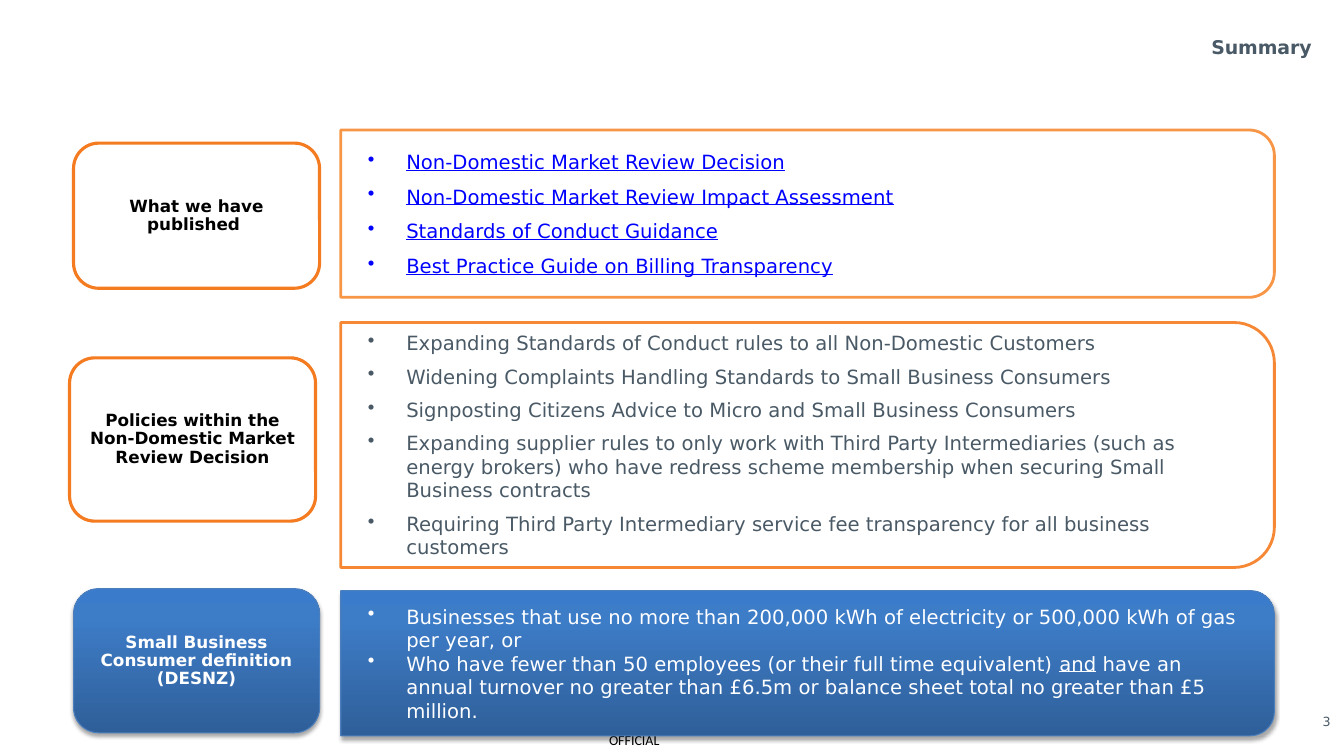
from dataclasses import dataclass
from math import cos, pi, sin

from pptx import Presentation
from pptx.dml.color import RGBColor
from pptx.enum.shapes import MSO_SHAPE
from pptx.enum.text import MSO_ANCHOR, PP_ALIGN
from pptx.oxml import parse_xml
from pptx.oxml.ns import nsdecls, qn
from pptx.util import Emu, Pt

EMU_PER_PX = 9144  # 100 px to the inch
BODY_FONT = "DejaVu Sans"
ROUNDED = MSO_SHAPE.ROUNDED_RECTANGLE
MIDDLE = MSO_ANCHOR.MIDDLE
LEFT, CENTER, RIGHT = PP_ALIGN.LEFT, PP_ALIGN.CENTER, PP_ALIGN.RIGHT
COLORS = {
    "white": "FFFFFF", "black": "000000", "slate": "495965", "link": "0000FF",
    "orange": "F47B20", "light_orange": "F79646", "blue_edge": "4B7EBC",
    "blue_dark": "2F5F99", "blue_mid": "3D7CC7", "blue_top": "3A7CCB",
}
PANEL_LEFT, PANEL_WIDTH = 338, 926
LABEL_WIDTH, LABEL_RADIUS = 244, 25
BULLET_INDENT = 38


@dataclass(frozen=True)
class Label:
    text: str
    left: int
    top: int
    height: int


@dataclass(frozen=True)
class Panel:
    """List box; words between underscores are underlined."""
    items: tuple[str, ...]
    top: int
    height: int
    radius: int
    margins: tuple[int, int, int, int]
    space_before: int
    color: str
    line: str
    opacity: int = 100


@dataclass(frozen=True)
class Row:
    label: Label
    panel: Panel
    solid: bool = False


ROWS = (
    Row(Label("What we have published ", 73, 142, 144),
        Panel(("_Non-Domestic Market Review Decision_",
               "_Non-Domestic Market Review Impact Assessment_",
               "_Standards of Conduct Guidance_",
               "_Best Practice Guide on Billing Transparency_"),
              129, 166, 25, (27, 18, 32, 18), 8, "link", "light_orange")),
    Row(Label("Policies within the Non-Domestic Market Review Decision", 69, 355, 162),
        Panel(("Expanding Standards of Conduct rules to all Non-Domestic Customers",
               "Widening Complaints Handling Standards to Small Business Consumers",
               "Signposting Citizens Advice to Micro and Small Business Consumers",
               "Expanding supplier rules to only work with Third Party Intermediaries (such as "
               "energy brokers) who have redress scheme membership when securing Small "
               "Business contracts",
               "Requiring Third Party Intermediary service fee transparency for all business "
               "customers"),
              320, 243, 40, (27, 22, 36, 22), 7, "slate", "orange", 90)),
    Row(Label("Small Business Consumer definition (DESNZ)", 73, 584, 143),
        Panel(("Businesses that use no more than 200,000 kWh of electricity or 500,000 kWh "
               "of gas per year, or",
               "Who have fewer than 50 employees (or their full time equivalent) _and_ have an "
               "annual turnover no greater than £6.5m or balance sheet total no greater than "
               "£5 million."),
              586, 144, 24, (27, 19, 32, 19), 0, "white", "blue_edge"),
        solid=True),
)


def px(length: float) -> Emu:
    return Emu(round(length * EMU_PER_PX))


def rgb(name: str) -> RGBColor:
    return RGBColor.from_string(COLORS[name])


def style_font(font, size: float, color: str, bold: bool = False, name: str = BODY_FONT) -> None:
    font.name, font.size, font.bold = name, Pt(size), bold
    font.color.rgb = rgb(color)


def set_margins(frame, margins: tuple[int, int, int, int]) -> None:
    frame.margin_left, frame.margin_top, frame.margin_right, frame.margin_bottom = map(px, margins)


def style_outline(shape, color: str, width: float, opacity: int = 100) -> None:
    shape.shadow.inherit = False
    shape.fill.background()
    shape.line.color.rgb = rgb(color)
    shape.line.width = Pt(width)
    if opacity < 100:
        line_color = shape.line._get_or_add_ln().find(".//" + qn("a:srgbClr"))
        line_color.append(parse_xml(f'<a:alpha {nsdecls("a")} val="{opacity * 1000}"/>'))


def style_solid(shape) -> None:
    """Blue gradient, dark at the bottom, with a soft drop shadow."""
    style_outline(shape, "blue_edge", 0.75)
    stops = "".join(
        f'<a:gs pos="{percent * 1000}"><a:srgbClr val="{COLORS[name]}"/></a:gs>'
        for percent, name in ((0, "blue_dark"), (80, "blue_mid"), (100, "blue_top")))
    properties = shape._element.spPr
    properties.replace(properties.find(qn("a:noFill")), parse_xml(
        f'<a:gradFill {nsdecls("a")} rotWithShape="1"><a:gsLst>{stops}</a:gsLst>'
        '<a:lin ang="16200000" scaled="0"/></a:gradFill>'))
    properties.find(qn("a:effectLst")).append(parse_xml(
        f'<a:outerShdw {nsdecls("a")} blurRad="{Pt(3.1)}" dist="{Pt(1.8)}" dir="5400000" '
        f'rotWithShape="0"><a:srgbClr val="{COLORS["black"]}"><a:alpha val="35000"/>'
        '</a:srgbClr></a:outerShdw>'))


def add_label(page, label: Label, solid: bool) -> None:
    box = page.shapes.add_shape(
        ROUNDED, px(label.left), px(label.top), px(LABEL_WIDTH), px(label.height))
    box.adjustments[0] = LABEL_RADIUS / label.height
    if solid:
        style_solid(box)
    else:
        style_outline(box, "orange", 2.25)
    frame = box.text_frame
    frame.text = label.text
    frame.word_wrap, frame.vertical_anchor = True, MIDDLE
    set_margins(frame, (11, 8, 11, 8))
    para = frame.paragraphs[0]
    para.alignment, para.line_spacing = CENTER, 0.9
    style_font(para.runs[0].font, 12, "white" if solid else "black", bold=True)


def build_panel_outline(page, panel: Panel):
    """Rectangle with only its right corners rounded."""
    right, bottom = PANEL_LEFT + PANEL_WIDTH, panel.top + panel.height
    center_x = right - panel.radius
    points = [
        (center_x + panel.radius * cos(angle), center_y + panel.radius * sin(angle))
        for center_y, start in ((panel.top + panel.radius, -pi / 2), (bottom - panel.radius, 0))
        for angle in (start + step * pi / 24 for step in range(13))]
    points.append((PANEL_LEFT, bottom))
    builder = page.shapes.build_freeform(px(PANEL_LEFT), px(panel.top))
    builder.add_line_segments([(px(x), px(y)) for x, y in points], close=True)
    return builder.convert_to_shape()


def add_bullet(para) -> None:
    properties = para._p.get_or_add_pPr()
    properties.set("marL", str(px(BULLET_INDENT)))
    properties.set("indent", str(px(-BULLET_INDENT)))
    properties.append(parse_xml(f'<a:buChar {nsdecls("a")} char="•"/>'))


def add_panel(page, panel: Panel, solid: bool) -> None:
    box = build_panel_outline(page, panel)
    if solid:
        style_solid(box)
    else:
        style_outline(box, panel.line, 2, panel.opacity)
    frame = box.text_frame
    frame.word_wrap, frame.vertical_anchor = True, MIDDLE
    set_margins(frame, panel.margins)
    for index, item in enumerate(panel.items):
        para = frame.add_paragraph() if index else frame.paragraphs[0]
        add_bullet(para)
        para.alignment = LEFT
        para.space_before = Pt(panel.space_before if index else 0)
        for position, piece in enumerate(item.split("_")):
            if piece:
                span = para.add_run()
                span.text = piece
                style_font(span.font, 14, panel.color)
                span.font.underline = position % 2 == 1


def add_title(page) -> None:
    title = page.shapes.title
    title.left, title.top, title.width, title.height = map(px, (436, 31, 875, 31))
    frame = title.text_frame
    frame.text = "Summary"
    frame.vertical_anchor = MIDDLE
    frame.paragraphs[0].alignment = RIGHT
    style_font(frame.paragraphs[0].runs[0].font, 13.5, "slate", bold=True)


def add_note(page, text: str, bounds: tuple[int, int, int, int],
             margins: tuple[int, int, int, int], size: float, color: str, font: str) -> None:
    frame = page.shapes.add_textbox(*map(px, bounds)).text_frame
    frame.text = text
    frame.word_wrap = True
    set_margins(frame, margins)
    style_font(frame.paragraphs[0].runs[0].font, size, color, name=font)


def main() -> None:
    deck = Presentation()
    deck.slide_width, deck.slide_height = px(1333), px(750)
    page = deck.slides.add_slide(deck.slide_layouts[5])
    add_title(page)
    add_note(page, "OFFICIAL", (604, 726, 128, 17), (0, 0, 0, 0), 10, "black", "Calibri")
    add_note(page, "3", (1302, 703, 31, 29), (10, 5, 0, 5), 9, "slate", BODY_FONT)
    for row in ROWS:
        add_panel(page, row.panel, row.solid)
        add_label(page, row.label, row.solid)
    deck.save("out.pptx")


if __name__ == "__main__":
    main()
